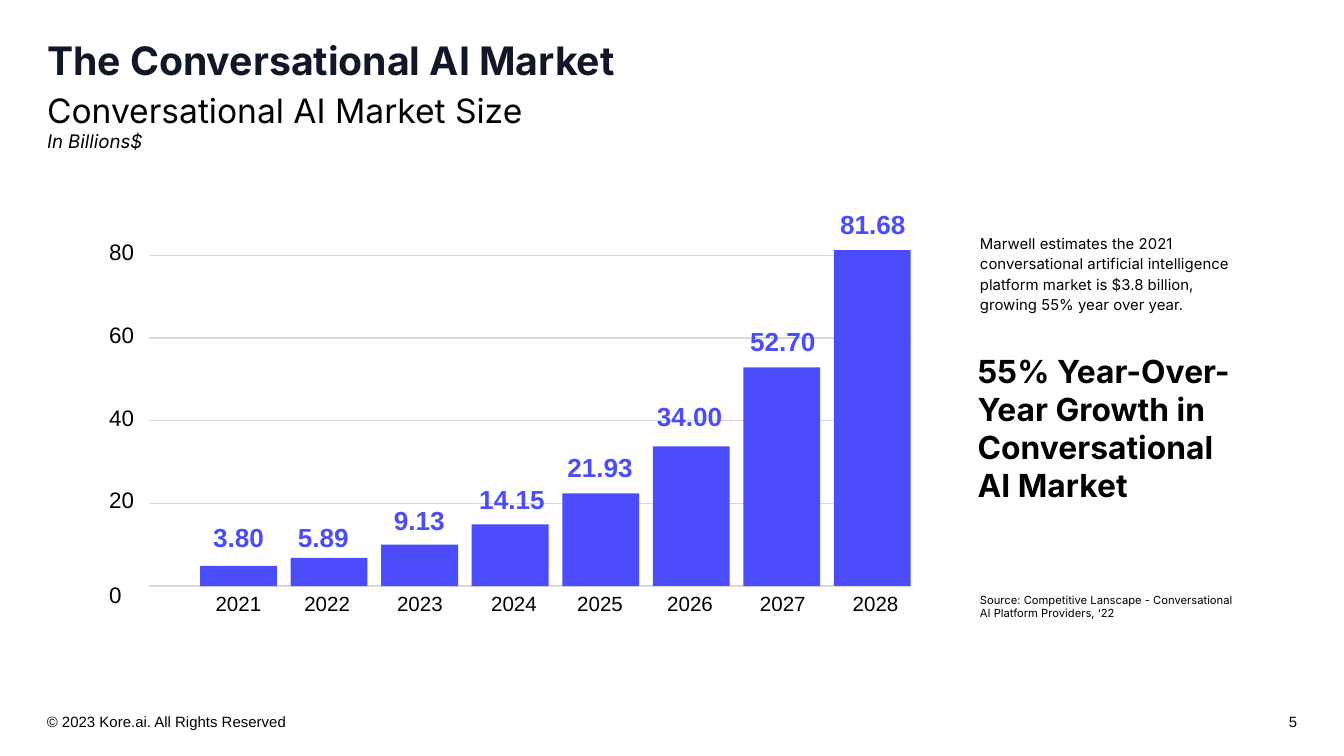
from lxml.etree import SubElement
from pptx import Presentation
from pptx.dml.color import RGBColor
from pptx.enum.shapes import MSO_CONNECTOR, MSO_SHAPE
from pptx.enum.text import MSO_ANCHOR, MSO_AUTO_SIZE, PP_ALIGN
from pptx.oxml.ns import qn
from pptx.util import Pt

BLACK, NAVY, BLUE, GREY = "000000", "101727", "4B4DFC", "D8D8D8"
TOP, BOTTOM = MSO_ANCHOR.TOP, MSO_ANCHOR.BOTTOM
LEFT, MID, RIGHT = PP_ALIGN.LEFT, PP_ALIGN.CENTER, PP_ALIGN.RIGHT

HEAD = [("The Conversational AI Market", dict(size=21, bold=True, color=NAVY))]
SUB = [
    ("Conversational AI Market Size", dict(size=18)),
    ("In Billions$", dict(size=10, italic=True)),
]
# year, its centre, bar height, value, its centre, its top
BARS = [
    ("2021", 127.8, 10.8, "3.80", 127.8, 276.5),
    ("2022", 175.3, 15.1, "5.89", 173.2, 276.5),
    ("2023", 225.0, 22.3, "9.13", 224.6, 267.1),
    ("2024", 275.4, 33.1, "14.15", 274.3, 256.3),
    ("2025", 321.5, 49.7, "21.93", 321.5, 239.0),
    ("2026", 369.7, 74.9, "34.00", 369.4, 211.7),
    ("2027", 419.4, 117.2, "52.70", 419.4, 171.4),
    ("2028", 469.1, 180.0, "81.68", 467.6, 108.7),
]
# tick, distance of its label's top above the grid line
TICKS = [("0", 5.8), ("20", 12), ("40", 12), ("60", 12), ("80", 12)]
# text, format, box (left, top, width, height), inset (x, y), spacing, align, anchor
NOTES = [
    ("Marwell estimates the 2021 conversational artificial intelligence "
     "platform market is $3.8 billion, growing 55% year over year.",
     dict(size=8), (520, 119, 150.5, 72.7), (5, 5), 1.15, LEFT, TOP),
    ("55% Year-Over-Year Growth in Conversational AI Market",
     dict(size=17, bold=True), (519.5, 184, 155.5, 110.9), (4.3, 4.3), 1, LEFT, TOP),
    ("Source: Competitive Lanscape - Conversational AI Platform Providers, ‘22",
     dict(size=6), (520, 312.7, 148.3, 25.2), (5, 5), 1, LEFT, TOP),
    ("© 2023 Kore.ai. All Rights Reserved",
     dict(size=8, name="Arial"), (20.1, 378.5, 222.5, 15.8), (5, 2.9), 1, LEFT, BOTTOM),
    ("5", dict(size=8, name="Arial"), (646, 378.5, 54, 15.8), (5, 2.9), 1, RIGHT, BOTTOM),
]
BASE, STEP = 314, 44.3          # zero line and gap between grid lines
GRID_X = 80, 488                # ends of each grid line
BAR_X, PITCH, BAR_W = 107.2, 48.5, 41.2


def rgb(code):
    return RGBColor.from_string(code)


def style(font, size, color=BLACK, name="Inter", bold=False, italic=False):
    values = dict(size=Pt(size), name=name, bold=bold, italic=italic)
    for key, value in values.items():
        setattr(font, key, value)
    font.color.rgb = rgb(color)


def write(shape, lines, box, inset=(5, 2.9), space=1, align=LEFT, anchor=TOP):
    """Place a shape and fill it with one paragraph per line."""
    for key, value in zip(("left", "top", "width", "height"), box):
        setattr(shape, key, Pt(value))
    frame = shape.text_frame
    across, down = map(Pt, inset)
    values = dict(word_wrap=True, auto_size=MSO_AUTO_SIZE.NONE, vertical_anchor=anchor,
                  margin_left=across, margin_right=across,
                  margin_top=down, margin_bottom=down)
    for key, value in values.items():
        setattr(frame, key, value)
    for i, (text, form) in enumerate(lines):
        para = frame.add_paragraph() if i else frame.paragraphs[0]
        para.alignment, para.line_spacing, para.space_before = align, space, Pt(0)
        run = para.add_run()
        run.text = text
        style(run.font, **form)


def add_text(slide, text, form, box, *rest):
    write(slide.shapes.add_textbox(*map(Pt, box)), [(text, form)], box, *rest)


def add_label(slide, text, mid, top, wide, high, **form):
    """Add an Arial label centred on mid."""
    add_text(slide, text, dict(name="Arial", **form),
             (mid - wide / 2, top, wide, high), (5, 2.9), 1, MID)


def add_grid(slide):
    start, end = GRID_X
    for i, (tick, rise) in enumerate(TICKS):
        y = BASE - i * STEP
        line = slide.shapes.add_connector(
            MSO_CONNECTOR.STRAIGHT, Pt(start), Pt(y), Pt(end), Pt(y))
        line.line.color.rgb, line.line.width = rgb(GREY), Pt(0.75)
        SubElement(line._element.spPr, qn("a:effectLst"))
        add_text(slide, tick, dict(size=12, name="Arial"), (53.5, y - rise, 26, 20))


def add_bars(slide):
    for i, (year, mid, high, value, at, top) in enumerate(BARS):
        box = BAR_X + i * PITCH, BASE - high, BAR_W, high
        bar = slide.shapes.add_shape(MSO_SHAPE.RECTANGLE, *map(Pt, box))
        bar.shadow.inherit = False
        bar.fill.solid()
        bar.fill.fore_color.rgb = rgb(BLUE)
        bar.line.fill.background()
        add_label(slide, year, mid, BASE, 41, 18.7, size=11)
        add_label(slide, value, at, top, 54, 22.3, size=14, bold=True, color=BLUE)


def main():
    deck = Presentation()
    deck.slide_width, deck.slide_height = Pt(720), Pt(405)
    slide = deck.slides.add_slide(deck.slide_layouts[0])
    title, sub = slide.placeholders
    write(title, HEAD, (20.2, 19.4, 619.2, 34.6), space=0.9)
    write(sub, SUB, (20.2, 46.8, 680.4, 38.2), space=0.96)
    add_grid(slide)
    add_bars(slide)
    for note in NOTES:
        add_text(slide, *note)
    deck.save("out.pptx")


if __name__ == "__main__":
    main()
